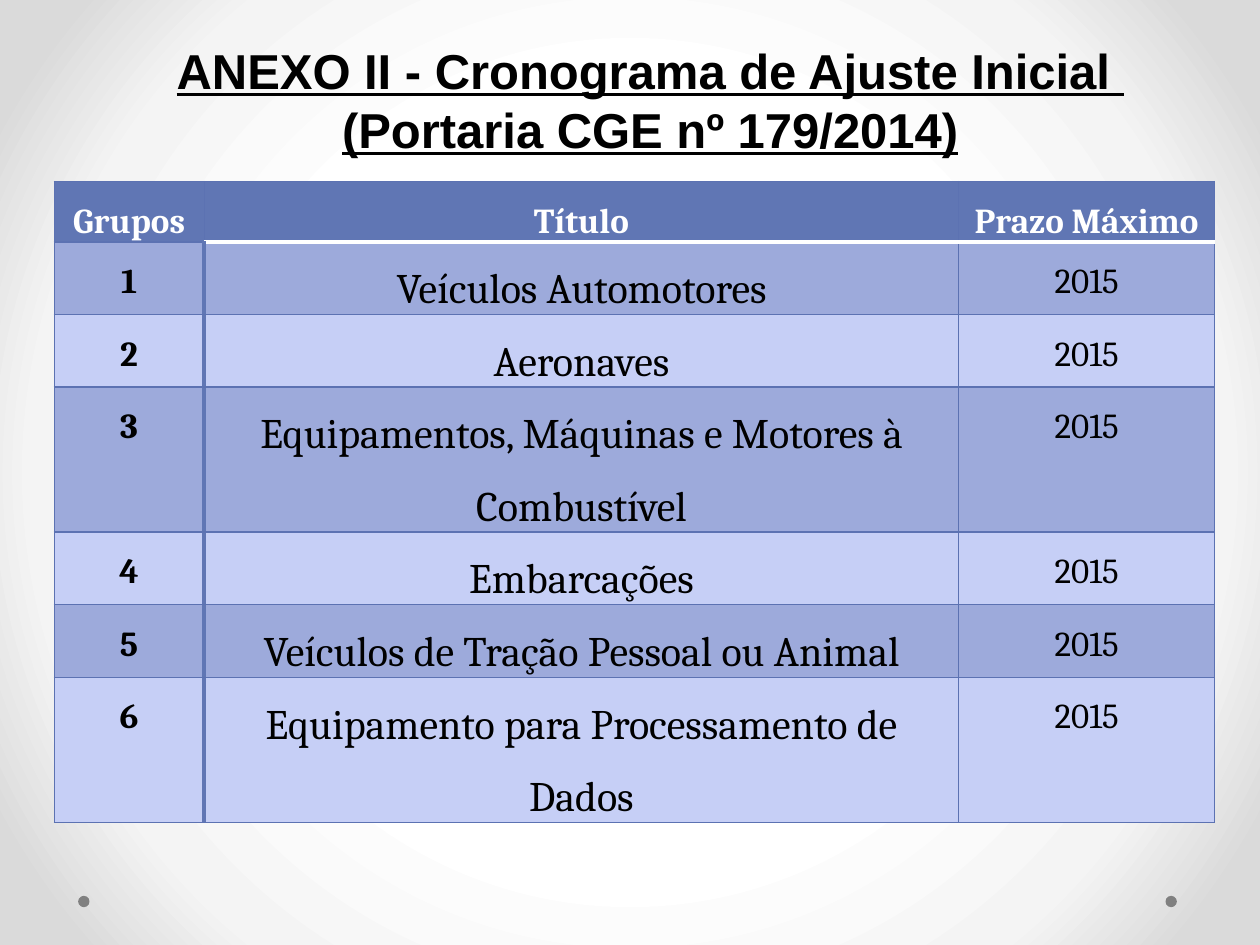
import dataclasses

import pptx
import pptx.dml.color
import pptx.enum.shapes
import pptx.enum.text
import pptx.oxml.ns
import pptx.oxml.xmlchemy
import pptx.table
import pptx.text.text
import pptx.util
from lxml import etree

Inches = pptx.util.Inches
Pt = pptx.util.Pt
qn = pptx.oxml.ns.qn

BLUE, EDGE, WHITE, BLACK = "6076B4", "5C72B2", "FFFFFF", "000000"
BANDS = ("9DAADB", "C6CFF6")
STOPS = ((50, "FFFFFF"), (76, "F4F4F4"), (92, "DADADA"))
HEADS = ("Grupos", "Título", "Prazo Máximo")
WIDTHS = (1.19, 5.99, 2.03)
LIMIT = "2015"


@dataclasses.dataclass
class Group:
    title: str
    lines: int = 1


@dataclasses.dataclass
class Style:
    size: float
    bold: bool
    tint: str = BLACK
    font: str = "Cambria"
    under: bool = False


@dataclasses.dataclass
class Edge:
    tint: str = EDGE
    width: float = 0.75


GROUPS = (
    Group("Veículos Automotores"),
    Group("Aeronaves"),
    Group("Equipamentos, Máquinas e Motores à Combustível", 2),
    Group("Embarcações"),
    Group("Veículos de Tração Pessoal ou Animal"),
    Group("Equipamento para Processamento de Dados"),
)
HEAD = Style(20, True, WHITE)
BODY = (Style(20, True), Style(24, False), Style(20, False))
TITLE = Style(28, True, font="Arial", under=True)


def color(tint: str) -> pptx.dml.color.RGBColor:
    return pptx.dml.color.RGBColor.from_string(tint)


def write(para: pptx.text.text._Paragraph, text: str, style: Style) -> None:
    para.alignment = pptx.enum.text.PP_ALIGN.CENTER
    run = para.add_run()
    run.text = text
    font = run.font
    font.name, font.size = style.font, Pt(style.size)
    font.bold, font.underline = style.bold, style.under
    font.color.rgb = color(style.tint)


def solid(parent: etree._Element, tint: str) -> None:
    fill = etree.SubElement(parent, qn("a:solidFill"))
    etree.SubElement(fill, qn("a:srgbClr"), val=tint)


def paint(slide) -> None:
    """Give the slide a round gradient that darkens towards its corners."""
    slide.background.fill.gradient()
    grad = slide.element.find(".//" + qn("a:gradFill"))
    for child in list(grad):
        grad.remove(child)
    stops = etree.SubElement(grad, qn("a:gsLst"))
    for pos, tint in STOPS:
        stop = etree.SubElement(stops, qn("a:gs"), pos=str(pos * 1000))
        etree.SubElement(stop, qn("a:srgbClr"), val=tint)
    shade = etree.SubElement(grad, qn("a:path"), path="circle")
    sides = {side: "50000" for side in "ltrb"}
    etree.SubElement(shade, qn("a:fillToRect"), **sides)


def edges(row: int, col: int) -> dict[str, Edge]:
    """Work out a cell's borders so that neighbours agree on shared ones."""
    sides = {side: Edge() for side in "LRTB"}
    rule = Edge(WHITE, 2.25)
    if col > 0 and row < 2:
        sides["B" if row == 0 else "T"] = rule
    if row > 0 and col < 2:
        sides["R" if col == 0 else "L"] = Edge(BLUE, 2.25)
    return sides


def fill(table: pptx.table.Table, row: int, col: int,
         text: str, style: Style, tint: str) -> None:
    cell = table.cell(row, col)
    cell.margin_left = cell.margin_right = Inches(0.04)
    cell.margin_top = cell.margin_bottom = 0
    para = cell.text_frame.paragraphs[0]
    para.line_spacing = 1.5
    write(para, text, style)
    props = cell._tc.get_or_add_tcPr()
    for side, edge in edges(row, col).items():
        line = etree.SubElement(props, qn("a:ln" + side),
                                w=str(int(Pt(edge.width))))
        solid(line, edge.tint)
    cell.fill.solid()
    cell.fill.fore_color.rgb = color(tint)


def grid(slide) -> None:
    heights = [0.48] + [0.575 * group.lines for group in GROUPS]
    frame = slide.shapes.add_table(
        len(heights), len(WIDTHS), Inches(0.43), Inches(1.44),
        Inches(sum(WIDTHS)), Inches(sum(heights)))
    table = frame.table
    for col, width in zip(table.columns, WIDTHS):
        col.width = Inches(width)
    for row, height in zip(table.rows, heights):
        row.height = Inches(height)
    for col, text in enumerate(HEADS):
        fill(table, 0, col, text, HEAD, BLUE)
    for row, group in enumerate(GROUPS, 1):
        texts = (str(row), group.title, LIMIT)
        for col, (text, style) in enumerate(zip(texts, BODY)):
            fill(table, row, col, text, style, BANDS[(row - 1) % 2])


def dot(slide, left: float) -> None:
    shape = slide.shapes.add_shape(
        pptx.enum.shapes.MSO_SHAPE.OVAL,
        Inches(left), Inches(7.11), Inches(0.09), Inches(0.09))
    shape.shadow.inherit = False
    shape.fill.solid()
    shape.fill.fore_color.rgb = color("808080")
    shape.line.fill.background()


def head(slide) -> None:
    title = slide.shapes.title
    title.left, title.top = Inches(1.26), Inches(0.27)
    title.width, title.height = Inches(7.8), Inches(1.51)
    text = title.text_frame
    text.word_wrap = True
    text.auto_size = pptx.enum.text.MSO_AUTO_SIZE.NONE
    text.vertical_anchor = pptx.enum.text.MSO_ANCHOR.TOP
    write(text.paragraphs[0], "ANEXO II - Cronograma de Ajuste Inicial ", TITLE)
    write(text.add_paragraph(), "(Portaria CGE nº 179/2014)", TITLE)


def main() -> None:
    deck = pptx.Presentation()
    deck.slide_width, deck.slide_height = Inches(10), Inches(7.5)
    slide = deck.slides.add_slide(deck.slide_layouts[5])
    paint(slide)
    for left in (0.62, 9.25):
        dot(slide, left)
    grid(slide)
    head(slide)
    deck.save("out.pptx")


if __name__ == "__main__":
    main()
